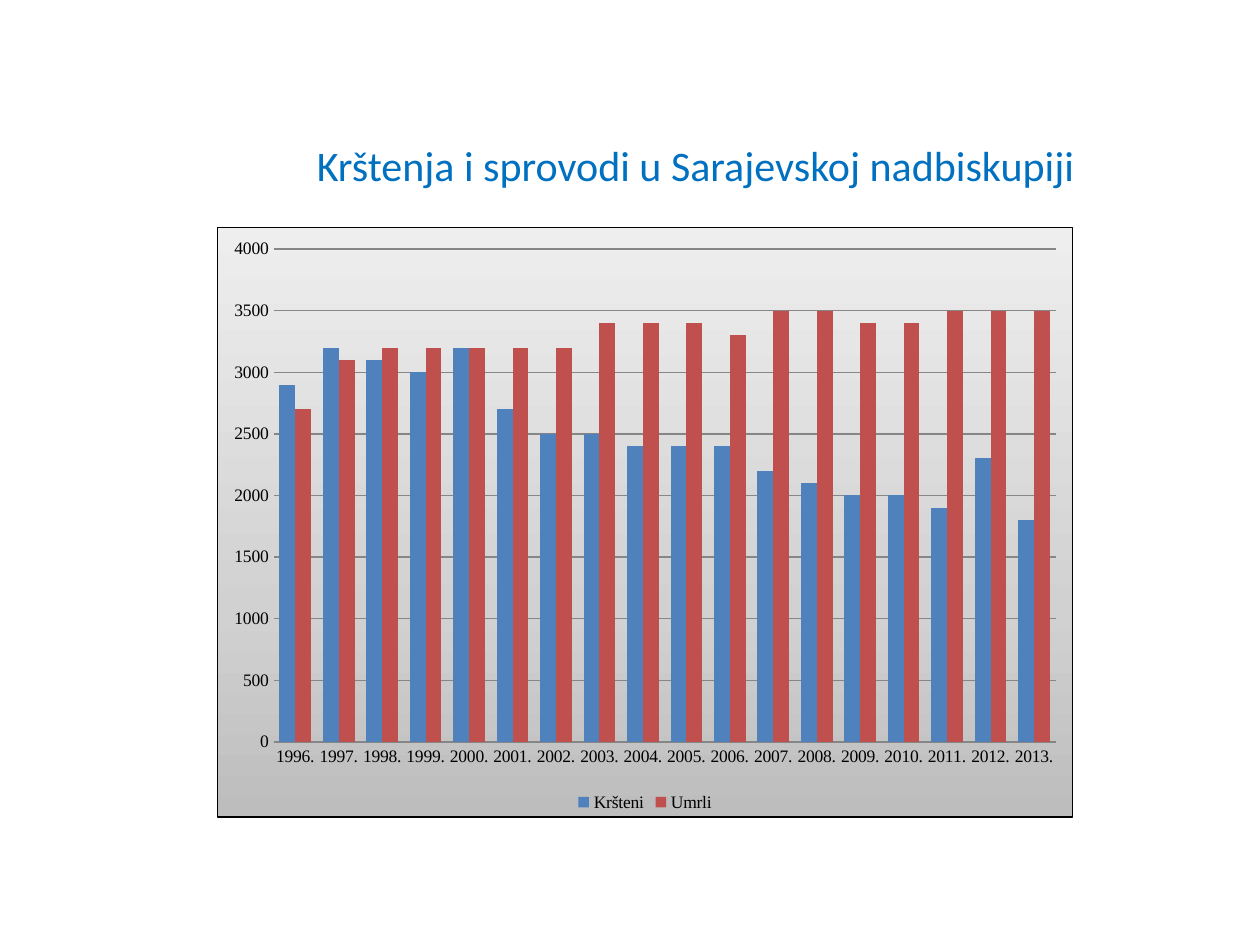
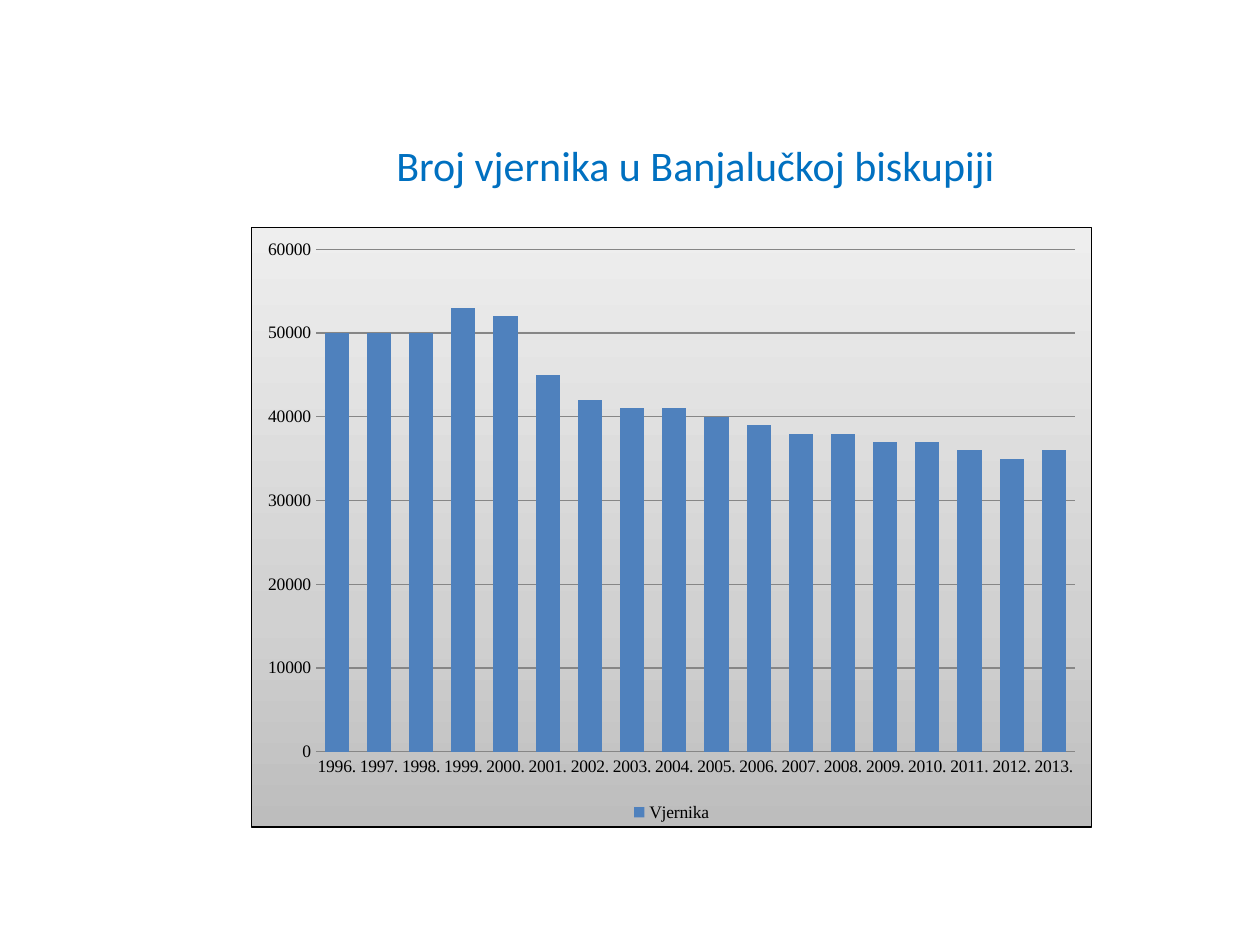
import pptx
import pptx.chart.data
import pptx.dml.color
import pptx.enum.chart
import pptx.enum.text
import pptx.oxml
import pptx.oxml.ns
import pptx.util
from pptx.util import Inches

BLUE, RED, GRID, BLACK = "4F81BD", "C0504D", "868686", "000000"
TITLE_COLOR = "0070C0"
BACKDROP = [(0, "BDBDBD"), (35, "D1D1D1"), (100, "EEEEEE")]
YEARS = [f"{year}." for year in range(1996, 2014)]

SLIDES = [
    {
        "title": "Krštenja i sprovodi u Sarajevskoj nadbiskupiji",
        "at": (1.72, 1.8, 6.8, 4.69),
        "scale": (4000, 500),
        "series": [
            ("Kršteni", BLUE, [2900, 3200, 3100, 3000, 3200, 2700, 2500, 2500, 2400,
                               2400, 2400, 2200, 2100, 2000, 2000, 1900, 2300, 1800]),
            ("Umrli", RED, [2700, 3100, 3200, 3200, 3200, 3200, 3200, 3400, 3400,
                            3400, 3300, 3500, 3500, 3400, 3400, 3500, 3500, 3500]),
        ],
    },
    {
        "title": "Broj vjernika u Banjalučkoj biskupiji",
        "at": (1.99, 1.8, 6.68, 4.77),
        "scale": (60000, 10000),
        "series": [
            ("Vjernika", BLUE, [50000, 50000, 50000, 53000, 52000, 45000, 42000, 41000, 41000,
                                40000, 39000, 38000, 38000, 37000, 37000, 36000, 35000, 36000]),
        ],
    },
]


def rgb(value):
    return pptx.dml.color.RGBColor.from_string(value)


def add_backdrop(chart):
    """Give the chart area its grey gradient and thin black border."""
    stops = "".join(f'<a:gs pos="{pos * 1000}"><a:srgbClr val="{color}"/></a:gs>'
                    for pos, color in BACKDROP)
    sp_pr = pptx.oxml.parse_xml(
        f'<c:spPr {pptx.oxml.ns.nsdecls("c", "a")}>'
        f'<a:gradFill><a:gsLst>{stops}</a:gsLst><a:lin ang="16200000" scaled="1"/></a:gradFill>'
        f'<a:ln w="9525"><a:solidFill><a:srgbClr val="{BLACK}"/></a:solidFill></a:ln></c:spPr>')
    chart.element.find(pptx.oxml.ns.qn("c:chart")).addnext(sp_pr)


prs = pptx.Presentation()
prs.slide_width, prs.slide_height = Inches(10), Inches(7.5)
NO_TICK = pptx.enum.chart.XL_TICK_MARK.NONE

for item in SLIDES:
    s = prs.slides.add_slide(prs.slide_layouts[6])

    tf = s.shapes.add_textbox(Inches(1.26), Inches(0.68), Inches(8.52), Inches(1.25)).text_frame
    tf.word_wrap = True
    tf.vertical_anchor = pptx.enum.text.MSO_ANCHOR.MIDDLE
    p = tf.paragraphs[0]
    p.alignment = pptx.enum.text.PP_ALIGN.CENTER
    r = p.add_run()
    r.text = item["title"]
    for name, value in {"name": "Calibri", "size": pptx.util.Pt(24)}.items():
        setattr(r.font, name, value)
    r.font.color.rgb = rgb(TITLE_COLOR)

    data = pptx.chart.data.CategoryChartData(number_format="0")
    data.categories = YEARS
    for name, color, values in item["series"]:
        data.add_series(name, values)
    chart = s.shapes.add_chart(pptx.enum.chart.XL_CHART_TYPE.COLUMN_CLUSTERED,
                               *map(Inches, item["at"]), data).chart
    add_backdrop(chart)
    for name, value in {"name": "Times New Roman", "size": pptx.util.Pt(10)}.items():
        setattr(chart.font, name, value)
    chart.font.color.rgb = rgb(BLACK)
    chart.has_title = False
    chart.has_legend = True
    chart.legend.position = pptx.enum.chart.XL_LEGEND_POSITION.BOTTOM
    chart.legend.include_in_layout = False

    plot = chart.plots[0]
    for name, value in {"gap_width": 75, "overlap": 0, "vary_by_categories": False}.items():
        setattr(plot, name, value)
    for series, (name, color, values) in zip(plot.series, item["series"]):
        series.invert_if_negative = False
        series.format.fill.solid()
        series.format.fill.fore_color.rgb = rgb(color)

    years, amounts = chart.category_axis, chart.value_axis
    for axis in (years, amounts):
        axis.major_tick_mark = axis.minor_tick_mark = NO_TICK
    top, step = item["scale"]
    for name, value in {"minimum_scale": 0, "maximum_scale": top, "major_unit": step,
                        "has_major_gridlines": True}.items():
        setattr(amounts, name, value)
    amounts.format.line.fill.background()
    for line in (years.format.line, amounts.major_gridlines.format.line):
        line.color.rgb = rgb(GRID)
        line.width = pptx.util.Pt(0.75)

prs.save("out.pptx")
